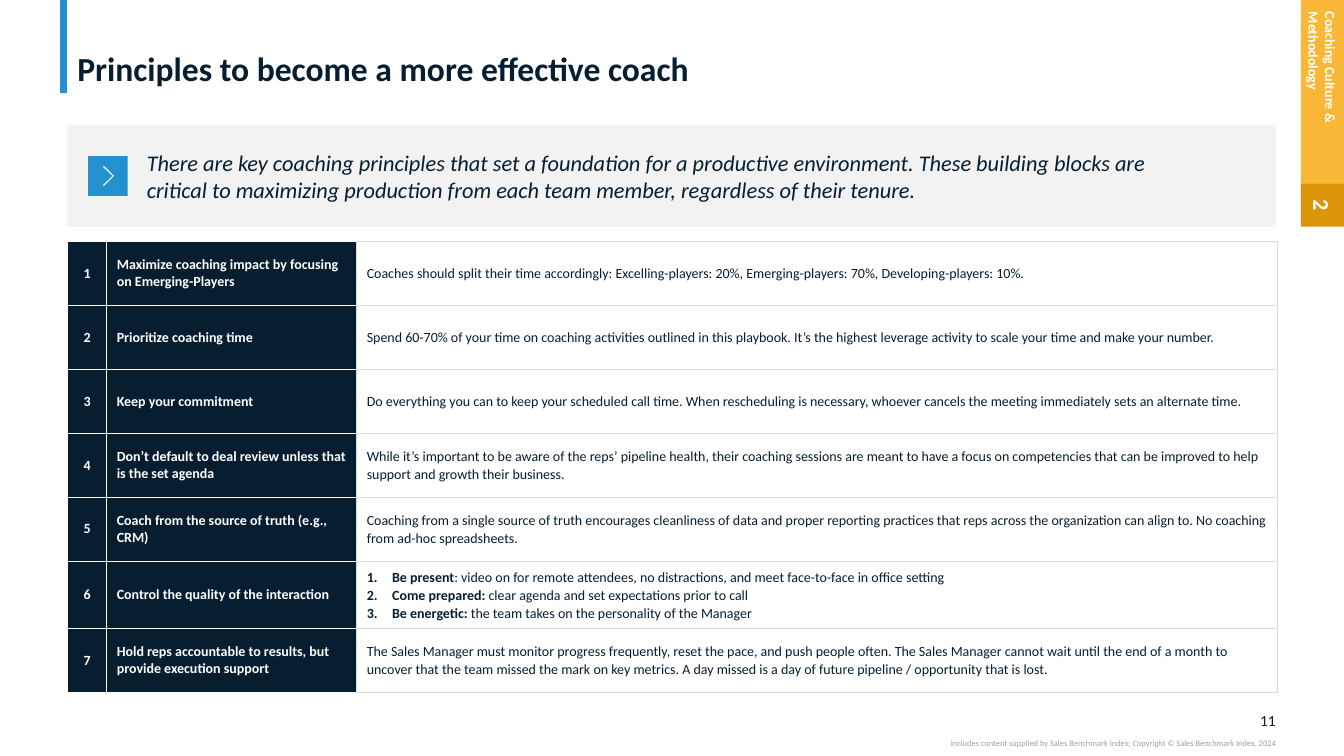
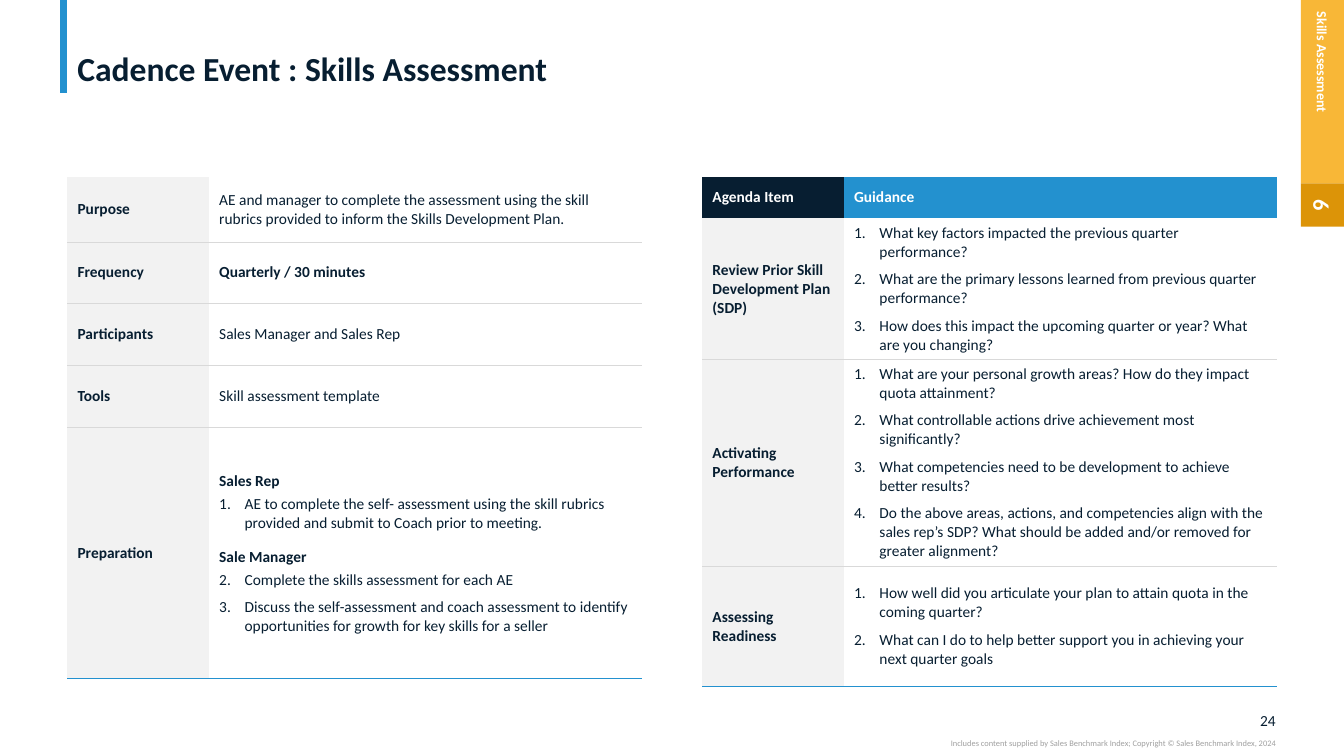
from lxml.etree import SubElement
from pptx import Presentation
from pptx.dml.color import RGBColor
from pptx.enum.shapes import MSO_CONNECTOR, MSO_SHAPE
from pptx.enum.text import MSO_ANCHOR, MSO_AUTO_SIZE, PP_ALIGN
from pptx.oxml.ns import qn
from pptx.util import Cm, Pt

HUES = {
    "navy": "071E31", "blue": "2391CF", "gold": "F8B737", "amber": "DC9408",
    "pale": "F2F2F2", "rule": "D9D9D9", "gray": "A0A0A0", "white": "FFFFFF",
}
FACE = "Calibri"
CREDIT = ("Includes content supplied by Sales Benchmark Index; "
          "Copyright © Sales Benchmark Index, 2024")
LEFT, WIDE = 1.7, 30.45
SIDES = ("margin_left", "margin_top", "margin_right", "margin_bottom")


def hue(name):
    return RGBColor.from_string(HUES[name])


def put(thing, values):
    for name, value in values.items():
        setattr(thing, name, value)


def span(box):
    return [Cm(n) for n in box]


def para(text, lead="", num=0, **form):
    return {"text": text, "lead": lead, "num": num, "form": form}


def count(block, start):
    props = block._p.get_or_add_pPr()
    props.set("marL", str(Cm(0.64)))
    props.set("indent", str(-Cm(0.64)))
    mark = SubElement(props, qn("a:buAutoNum"), type="arabicPeriod")
    if start > 1:
        mark.set("startAt", str(start))


def say(frame, paras, size, tint="navy", bold=False, italic=False):
    for i, item in enumerate(paras):
        block = frame.paragraphs[0] if i == 0 else frame.add_paragraph()
        if item["num"]:
            count(block, item["num"])
        put(block, {"alignment": PP_ALIGN.LEFT, **item["form"]})
        for words, heavy in ((item["lead"], True), (item["text"], bold)):
            if words:
                run = block.add_run()
                run.text = words
                put(run.font, {"name": FACE, "size": Pt(size), "bold": heavy,
                               "italic": italic})
                run.font.color.rgb = hue(tint)


def pad(frame, insets, anchor=MSO_ANCHOR.MIDDLE):
    put(frame, dict(zip(SIDES, span(insets))))
    put(frame, {"word_wrap": True, "auto_size": MSO_AUTO_SIZE.NONE,
                "vertical_anchor": anchor})


def paint(shape, tint):
    shape.shadow.inherit = False
    shape.fill.solid()
    shape.fill.fore_color.rgb = hue(tint)
    shape.line.fill.background()


def block(slide, box, tint, insets):
    shape = slide.shapes.add_shape(MSO_SHAPE.RECTANGLE, *span(box))
    paint(shape, tint)
    pad(shape.text_frame, insets)
    return shape


def note(slide, box, text, size, tint, anchor):
    frame = slide.shapes.add_textbox(*span(box)).text_frame
    pad(frame, (0, 0, 0, 0), anchor)
    say(frame, [para(text, alignment=PP_ALIGN.RIGHT)], size, tint)


def turn(slide, box, tint, text, size, align):
    x, y, w, h = box
    flat = (x + (w - h) / 2, y + (h - w) / 2, h, w)
    shape = block(slide, flat, tint, (0.3, 0.13, 0.3, 0.13))
    shape.rotation = 90
    say(shape.text_frame, [para(text, alignment=align)], size, "white", True)


def tab(slide, box, topic, part):
    x, y, w, h = box
    turn(slide, (x, y, w, h - w), "gold", topic, 10, PP_ALIGN.LEFT)
    turn(slide, (x, y + h - w, w, w), "amber", part, 16, PP_ALIGN.CENTER)


def head(slide, box, text):
    title = slide.shapes.title
    put(title, dict(zip(("left", "top", "width", "height"), span(box))))
    pad(title.text_frame, (0.25, 0, 0.25, 0), MSO_ANCHOR.BOTTOM)
    say(title.text_frame, [para(text, line_spacing=0.9)], 24, bold=True)


def page(deck, title, topic, part, folio):
    slide = deck.slides.add_slide(deck.slide_layouts[5])
    bar = slide.shapes.add_connector(
        MSO_CONNECTOR.STRAIGHT, *span((1.6, 0, 1.6, 2.34)))
    bar.line.color.rgb = hue("blue")
    bar.line.width = Pt(5)
    SubElement(bar._element.spPr, qn("a:effectLst"))
    head(slide, (LEFT, 0.1, WIDE, 2.13), title)
    end = LEFT + WIDE
    note(slide, (end - 0.85, 17.91, 0.85, 0.48), folio, 11, "navy",
         MSO_ANCHOR.MIDDLE)
    note(slide, (end - 13.1, 18.59, 13.1, 0.25), CREDIT, 6, "gray",
         MSO_ANCHOR.TOP)
    tab(slide, (32.78, 0, 1.09, 5.71), topic, part)
    return slide


def icon(slide, x, y):
    pen = slide.shapes.build_freeform(0, 0, scale=Cm(0.01))
    pen.add_line_segments([(100, 0), (100, 100), (0, 100)])
    pen.move_to(66, 50)
    pen.add_line_segments([(40, 76), (37, 73), (61, 50), (37, 27), (40, 24)])
    paint(pen.convert_to_shape(Cm(x), Cm(y)), "blue")


def lede(slide, box, text):
    x, y, w, h = box
    shape = block(slide, box, "pale", (2, 0.13, 2, 0.13))
    say(shape.text_frame, [para(text)], 16, italic=True)
    icon(slide, x + 0.52, y + (h - 1) / 2)


def edge(cell, lines):
    props = cell._tc.get_or_add_tcPr()
    for side in "LRTB":
        tint, width = lines.get(side, (None, 0))
        line = SubElement(props, qn(f"a:ln{side}"), w=str(Pt(width)))
        if tint:
            fill = SubElement(line, qn("a:solidFill"))
            SubElement(fill, qn("a:srgbClr"), val=HUES[tint])
        else:
            SubElement(line, qn("a:noFill"))


def cell(paras, fill=None, lines=None, **font):
    return {"paras": paras, "fill": fill, "lines": lines or {}, "font": font}


def grid(slide, box, cols, rows, cells):
    x, y, w = box
    frame = slide.shapes.add_table(
        len(rows), len(cols) + 1, *span((x, y, w, sum(rows))))
    table = frame.table
    put(table, {"first_row": False, "horz_banding": False})
    for col, width in zip(table.columns, [*cols, w - sum(cols)]):
        col.width = Cm(width)
    for row, height, specs in zip(table.rows, rows, cells):
        row.height = Cm(height)
        for spot, spec in zip(row.cells, specs):
            spot.vertical_anchor = MSO_ANCHOR.MIDDLE
            edge(spot, spec["lines"])
            if spec["fill"]:
                spot.fill.solid()
                spot.fill.fore_color.rgb = hue(spec["fill"])
            else:
                spot.fill.background()
            say(spot.text_frame, spec["paras"], **spec["font"])


def rules(slide, box, items):
    snow, mist = ("white", 0.5), ("rule", 0.5)
    dark = dict.fromkeys("LRTB", snow)
    soft = dict.fromkeys("LRTB", mist)
    bold = {"size": 10, "tint": "white", "bold": True}
    cells = []
    for i, (name, body) in enumerate(items, 1):
        if isinstance(body, str):
            body = [para(body, line_spacing=1.07)]
        cells.append([
            cell([para(str(i), alignment=PP_ALIGN.CENTER)], "navy", dark, **bold),
            cell([para(name)], "navy", {**dark, "R": mist}, **bold),
            cell(body, "white", soft, size=10),
        ])
    rows = [1.7 if len(row[2]["paras"]) > 1 else 1.61 for row in cells]
    grid(slide, box, (0.99, 6.3), rows, cells)


def plan(slide, box, rows, items, top=None):
    thin = ("rule", 0.25)
    cells = []
    if top:
        cells.append([cell([para(text)], fill, size=11, tint="white", bold=True)
                      for text, fill in zip(top, ("navy", "blue"))])
    for i, (name, body) in enumerate(items):
        lines = {"B": ("blue", 1) if i == len(items) - 1 else thin}
        if i:
            lines["T"] = thin
        cells.append([cell([para(name)], "pale", lines, size=11, bold=True),
                      cell(body, None, lines, size=11)])
    grid(slide, box, (3.57,), rows, cells)


def asks(*texts, start=1):
    return [para(text, num=start, space_after=Pt(6)) for text in texts]


def role(name, **form):
    return para("", name, line_spacing=1.1, space_after=Pt(3), **form)


def step(lead, text):
    return para(text, lead, num=1, line_spacing=1.07)


RULES = [
    ("Maximize coaching impact by focusing on Emerging-Players",
     "Coaches should split their time accordingly: Excelling-players: 20%, "
     "Emerging-players: 70%, Developing-players: 10%."),
    ("Prioritize coaching time",
     "Spend 60-70% of your time on coaching activities outlined in this playbook. "
     "It’s the highest leverage activity to scale your time and make your number."),
    ("Keep your commitment",
     "Do everything you can to keep your scheduled call time. When rescheduling is "
     "necessary, whoever cancels the meeting immediately sets an alternate time."),
    ("Don’t default to deal review unless that is the set agenda",
     "While it’s important to be aware of the reps’ pipeline health, their coaching "
     "sessions are meant to have a focus on competencies that can be improved to "
     "help support and growth their business."),
    ("Coach from the source of truth (e.g., CRM)",
     "Coaching from a single source of truth encourages cleanliness of data and "
     "proper reporting practices that reps across the organization can align to. "
     "No coaching from ad-hoc spreadsheets."),
    ("Control the quality of the interaction", [
        step("Be present", ": video on for remote attendees, no distractions, "
             "and meet face-to-face in office setting"),
        step("Come prepared: ", "clear agenda and set expectations prior to call"),
        step("Be energetic: ", "the team takes on the personality of the Manager"),
    ]),
    ("Hold reps accountable to results, but provide execution support",
     "The Sales Manager must monitor progress frequently, reset the pace, and push "
     "people often. The Sales Manager cannot wait until the end of a month to "
     "uncover that the team missed the mark on key metrics. A day missed is a day "
     "of future pipeline / opportunity that is lost."),
]
EVENT = [
    ("Purpose", [para("AE and manager to complete the assessment using the skill "
                      "rubrics provided to inform the Skills Development Plan.")]),
    ("Frequency", [para("", "Quarterly / 30 minutes")]),
    ("Participants", [para("Sales Manager and Sales Rep")]),
    ("Tools", [para("Skill assessment template")]),
    ("Preparation", [
        role("Sales Rep"),
        *asks("AE to complete the self- assessment using the skill rubrics "
              "provided and submit to Coach prior to meeting."),
        role("Sale Manager", space_before=Pt(3)),
        *asks("Complete the skills assessment for each AE",
              "Discuss the self-assessment and coach assessment to identify "
              "opportunities for growth for key skills for a seller", start=2),
    ]),
]
AGENDA = [
    ("Review Prior Skill Development Plan (SDP)", asks(
        "What key factors impacted the previous quarter performance?",
        "What are the primary lessons learned from previous quarter performance?",
        "How does this impact the upcoming quarter or year? What are you changing?")),
    ("Activating Performance", asks(
        "What are your personal growth areas? How do they impact quota attainment?",
        "What controllable actions drive achievement most significantly?",
        "What competencies need to be development to achieve better results?",
        "Do the above areas, actions, and competencies align with the sales rep’s "
        "SDP? What should be added and/or removed for greater alignment?")),
    ("Assessing Readiness", asks(
        "How well did you articulate your plan to attain quota in the coming quarter?",
        "What can I do to help better support you in achieving your next quarter "
        "goals")),
]


def main():
    deck = Presentation()
    put(deck, {"slide_width": Cm(33.87), "slide_height": Cm(19.05)})

    coach = page(deck, "Principles to become a more effective coach",
                 "Coaching Culture & Methodology", "2", "11")
    lede(coach, (LEFT, 3.15, WIDE, 2.57),
         "There are key coaching principles that set a foundation for a productive "
         "environment. These building blocks are critical to maximizing production "
         "from each team member, regardless of their tenure.")
    rules(coach, (LEFT, 6.09, 30.48), RULES)

    skill = page(deck, "Cadence Event : Skills Assessment",
                 "Skills Assessment", "6", "24")
    plan(skill, (LEFT, 4.46, 14.48), (1.63, 1.56, 1.56, 1.56, 6.32), EVENT)
    plan(skill, (17.7, 4.46, 14.48), (1.04, 3.4, 4.8, 3.05), AGENDA,
         ("Agenda Item", "Guidance"))
    deck.save("out.pptx")


if __name__ == "__main__":
    main()
